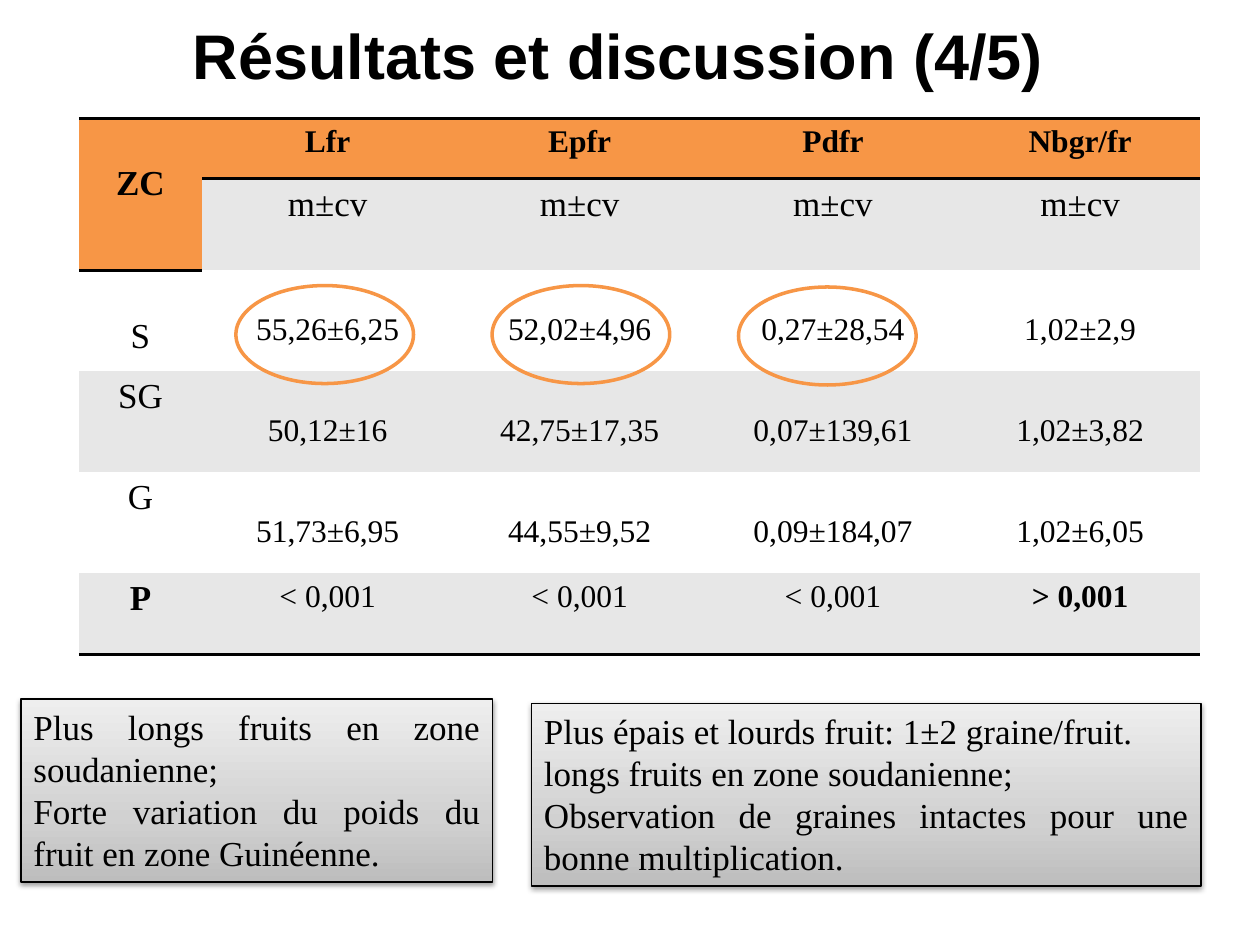
from lxml.etree import SubElement
from pptx import Presentation
from pptx.dml.color import RGBColor
from pptx.enum.shapes import MSO_SHAPE
from pptx.enum.text import MSO_ANCHOR, PP_ALIGN
from pptx.oxml import parse_xml
from pptx.oxml.ns import nsdecls, qn
from pptx.util import Pt

COLORS = {"text": "000000", "accent": "F79646", "band": "E7E7E7", "plain": "FFFFFF",
          "dark": "BDBDBD", "middle": "D1D1D1", "light": "EEEEEE"}
SERIF = "Times New Roman"
NO_STYLE = "{2D5ABB26-0587-4C30-8999-92F81FD0307C}"
ROWS = [
    ["ZC", "Lfr", "Epfr", "Pdfr", "Nbgr/fr"],
    ["", "m±cv", "m±cv", "m±cv", "m±cv"],
    ["S", "55,26±6,25", "52,02±4,96", "0,27±28,54", "1,02±2,9"],
    ["SG", "50,12±16", "42,75±17,35", "0,07±139,61", "1,02±3,82"],
    ["G", "51,73±6,95", "44,55±9,52", "0,09±184,07", "1,02±6,05"],
    ["P", "< 0,001", "< 0,001", "< 0,001", "> 0,001"],
]
COLUMN_WIDTHS = [70.5, 143.5, 144.5, 145, 137.5]
ROW_HEIGHTS = [34.5, 51.5, 57.7, 57.7, 57.7, 46.8]


def color(name):
    """Return the named colour."""
    return RGBColor.from_string(COLORS[name])


def format_text(text_frame, size, alignment, font=SERIF, bold=False):
    """Format every paragraph and run of a text frame."""
    for paragraph in text_frame.paragraphs:
        paragraph.alignment = alignment
        for run in paragraph.runs:
            run.font.name = font
            run.font.size = Pt(size)
            run.font.bold = bold
            run.font.color.rgb = color("text")


def add_title(slide, text):
    """Fill and place the title placeholder."""
    title = slide.shapes.title
    title.left, title.top, title.width, title.height = Pt(24.5), Pt(5), Pt(667.5), Pt(52)
    title.text_frame.text = text
    title.text_frame.vertical_anchor = MSO_ANCHOR.MIDDLE
    format_text(title.text_frame, 36, PP_ALIGN.CENTER, "Arial", True)


def add_borders(cell, sides):
    """Draw black rules on the given sides of a cell."""
    properties = cell._tc.get_or_add_tcPr()
    for position, side in enumerate(sides):
        properties.insert(position, parse_xml(
            f'<a:ln{side} {nsdecls("a")} w="{Pt(2)}"><a:solidFill>'
            f'<a:srgbClr val="{COLORS["text"]}"/></a:solidFill></a:ln{side}>'))


def format_cell(cell, row, column):
    """Style a table cell by its place in the grid."""
    size = 20 if column == 0 or row == 1 else 18
    bold = row == 0 or (row == 5 and column in (0, 4))
    lowered = (row in (2, 3, 4) and column > 0) or (column == 0 and row in (0, 2))
    cell.margin_top = Pt(3.6 + size * 1.15 * lowered)
    cell.fill.solid()
    cell.fill.fore_color.rgb = color("accent" if row == 0 else "band" if row % 2 else "plain")
    format_text(cell.text_frame, size, PP_ALIGN.CENTER, bold=bold)
    add_borders(cell, {0: "TB", 5: "B"}.get(row, ""))


def add_results_table(slide):
    """Add the table of fruit measurements."""
    table = slide.shapes.add_table(len(ROWS), len(COLUMN_WIDTHS), Pt(45), Pt(67.5),
                                   Pt(sum(COLUMN_WIDTHS)), Pt(sum(ROW_HEIGHTS))).table
    table._tbl.tblPr.find(qn("a:tableStyleId")).text = NO_STYLE
    for column, width in zip(table.columns, COLUMN_WIDTHS):
        column.width = Pt(width)
    table.cell(0, 0).merge(table.cell(1, 0))
    for row, values in enumerate(ROWS):
        table.rows[row].height = Pt(ROW_HEIGHTS[row])
        for column, value in enumerate(values):
            cell = table.cell(row, column)
            if not cell.is_spanned:
                cell.text_frame.text = value
                format_cell(cell, row, column)


def add_highlight(slide, left, top):
    """Add an empty ellipse around a value."""
    ellipse = slide.shapes.add_shape(MSO_SHAPE.OVAL, Pt(left), Pt(top), Pt(101.5), Pt(56))
    ellipse.shadow.inherit = False
    ellipse.fill.background()
    ellipse.line.color.rgb = color("accent")
    ellipse.line.width = Pt(2)


def add_gradient(shape):
    """Fill a shape with grey, darkest at the bottom."""
    stops = "".join(f'<a:gs pos="{place * 1000}"><a:srgbClr val="{COLORS[name]}"/></a:gs>'
                    for place, name in ((0, "dark"), (35, "middle"), (100, "light")))
    shape._element.spPr.append(parse_xml(
        f'<a:gradFill {nsdecls("a")} rotWithShape="1"><a:gsLst>{stops}</a:gsLst>'
        '<a:lin ang="16200000" scaled="0"/></a:gradFill>'))


def add_shadow(shape):
    """Give a shape a soft shadow below it."""
    effects = SubElement(shape._element.spPr, qn("a:effectLst"))
    effects.append(parse_xml(
        f'<a:outerShdw {nsdecls("a")} blurRad="{Pt(3.1)}" dist="{Pt(1.6)}" dir="5400000" '
        f'rotWithShape="0"><a:srgbClr val="{COLORS["text"]}"><a:alpha val="38000"/>'
        '</a:srgbClr></a:outerShdw>'))


def add_comment_box(slide, left, top, width, lines):
    """Add a shaded box of justified remarks."""
    box = slide.shapes.add_shape(MSO_SHAPE.RECTANGLE, Pt(left), Pt(top), Pt(width), Pt(104.5))
    add_gradient(box)
    box.line.color.rgb = color("text")
    box.line.width = Pt(0.75)
    add_shadow(box)
    box.text_frame.text = "\n".join(lines)
    box.text_frame.word_wrap = True
    box.text_frame.vertical_anchor = MSO_ANCHOR.TOP
    format_text(box.text_frame, 20, PP_ALIGN.JUSTIFY)


def main():
    """Build the results slide and save it."""
    presentation = Presentation()
    presentation.slide_width, presentation.slide_height = Pt(720), Pt(540)
    slide = presentation.slides.add_slide(presentation.slide_layouts[5])
    add_title(slide, "Résultats et discussion (4/5) ")
    add_results_table(slide)
    for left, top in ((134.8, 163.2), (422, 164), (281.2, 163.2)):
        add_highlight(slide, left, top)
    add_comment_box(slide, 12, 399.5, 269.5, [
        "Plus longs fruits en zone soudanienne;",
        "Forte variation du poids du fruit en zone Guinéenne."])
    add_comment_box(slide, 303.8, 401.8, 382.5, [
        "Plus épais et lourds fruit: 1±2 graine/fruit.",
        "longs fruits en zone soudanienne;",
        "Observation de graines intactes pour une bonne multiplication."])
    presentation.save("out.pptx")


if __name__ == "__main__":
    main()
